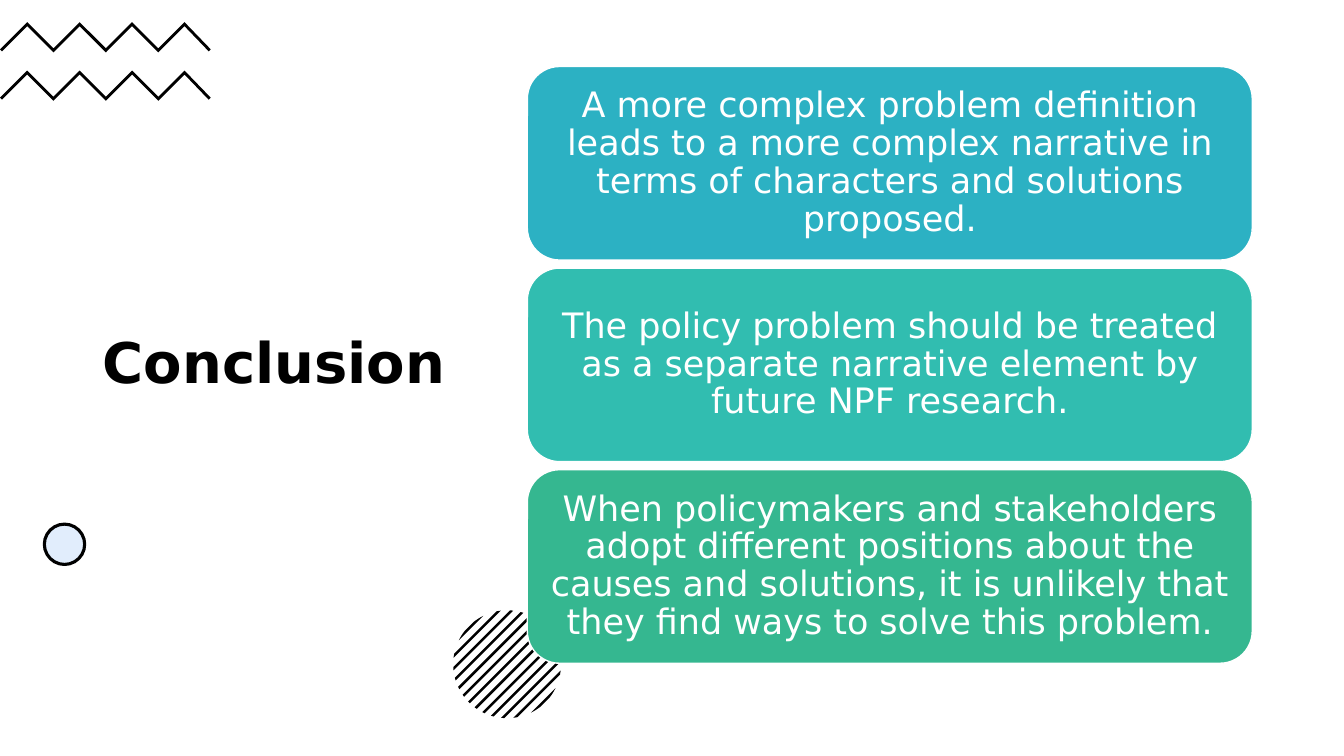
"""Build the Conclusion slide: a title, three message cards and line ornaments."""
from dataclasses import dataclass
from math import acos, cos, pi, sin

from pptx import Presentation
from pptx.dml.color import RGBColor
from pptx.enum.shapes import MSO_SHAPE
from pptx.enum.text import MSO_ANCHOR, PP_ALIGN
from pptx.util import Emu, Pt

PX = 9144


@dataclass(frozen=True)
class Theme:
    """Colours, font and type sizes of the slide."""
    ink: str = "000000"
    paper: str = "FFFFFF"
    dot: str = "E1EDFC"
    cards: tuple = ("2CB1C3", "31BDB0", "35B790")
    font: str = "DejaVu Sans"
    title_size: int = 40
    card_size: int = 25


THEME = Theme()

MESSAGES = (
    "A more complex problem definition leads to a more complex narrative "
    "in terms of characters and solutions proposed.",
    "The policy problem should be treated as a separate narrative element "
    "by future NPF research.",
    "When policymakers and stakeholders adopt different positions about the "
    "causes and solutions, it is unlikely that they find ways to solve this "
    "problem.",
)


def px(n):
    """Turn px into EMU."""
    return Emu(round(n * PX))


def write(tf, text, size, color, align, bold=False):
    """Write one middle-anchored paragraph into a text frame."""
    tf.word_wrap = True
    tf.vertical_anchor = MSO_ANCHOR.MIDDLE
    p = tf.paragraphs[0]
    p.text = text
    p.alignment = align
    p.line_spacing = 0.9
    p.font.name = THEME.font
    p.font.size = Pt(size)
    p.font.bold = bold
    p.font.color.rgb = RGBColor.from_string(color)


def add_title(s, text, x, y, w, h):
    """Add the slide title."""
    sp = s.shapes.add_textbox(px(x), px(y), px(w), px(h))
    write(sp.text_frame, text, THEME.title_size, THEME.ink, PP_ALIGN.LEFT, True)


def add_preset(s, kind, x, y, w, h, fill, line, width):
    """Add a filled and outlined preset shape."""
    sp = s.shapes.add_shape(kind, px(x), px(y), px(w), px(h))
    sp.shadow.inherit = False
    sp.fill.solid()
    sp.fill.fore_color.rgb = RGBColor.from_string(fill)
    sp.line.color.rgb = RGBColor.from_string(line)
    sp.line.width = Pt(width)
    return sp


def add_card(s, text, x, y, w, h, fill):
    """Add a rounded card with a centred message."""
    sp = add_preset(s, MSO_SHAPE.ROUNDED_RECTANGLE, x, y, w, h, fill, THEME.paper, 1)
    tf = sp.text_frame
    tf.margin_left = tf.margin_right = tf.margin_top = tf.margin_bottom = px(10)
    write(tf, text, THEME.card_size, THEME.paper, PP_ALIGN.CENTER)


def add_polygon(s, points):
    """Add a closed ink-filled outline through points given in px."""
    start, *rest = [(px(x), px(y)) for x, y in points]
    fb = s.shapes.build_freeform(*start, scale=1.0)
    fb.add_line_segments(rest, close=True)
    sp = fb.convert_to_shape()
    sp.shadow.inherit = False
    sp.fill.solid()
    sp.fill.fore_color.rgb = RGBColor.from_string(THEME.ink)
    sp.line.fill.background()


def add_zigzag(s, top):
    """Add a zigzag band of four peaks from the left edge."""
    bends = [(27 + 26 * i, top + 26 * (i % 2)) for i in range(7)]
    under = [(x, y + 4) for x, y in reversed(bends)]
    add_polygon(s, [(0, top + 27), *bends, (209, top + 27),
                    (207, top + 29), *under, (2, top + 29)])


def add_striped_disc(s, cx, cy, radius, pitch, stripe, steps=6):
    """Add a disc made of diagonal stripes."""
    reach = int(radius // pitch)
    for k in range(-reach, reach + 1):
        near, far = (acos(max(-1, min(1, (k * pitch + side) / radius)))
                     for side in (-stripe / 2, stripe / 2))
        arc = [near + (far - near) * i / steps for i in range(steps + 1)]
        angles = [pi / 4 + a for a in arc] + [pi / 4 - a for a in reversed(arc)]
        add_polygon(s, [(cx + radius * cos(a), cy + radius * sin(a)) for a in angles])


def main():
    """Build and save the slide."""
    prs = Presentation()
    prs.slide_width, prs.slide_height = px(1333), px(750)
    s = prs.slides.add_slide(prs.slide_layouts[6])
    add_title(s, "Conclusion", 92, 131, 367, 463)
    for top in (22, 70):
        add_zigzag(s, top)
    add_preset(s, MSO_SHAPE.OVAL, 44, 520, 40, 40, THEME.dot, THEME.ink, 2.25)
    add_striped_disc(s, 503, 659, 53.5, 8.65, 2.5)
    for i, (text, fill) in enumerate(zip(MESSAGES, THEME.cards)):
        add_card(s, text, 523, 66 + 200 * i, 719, 192, fill)
    prs.save("out.pptx")


if __name__ == "__main__":
    main()
